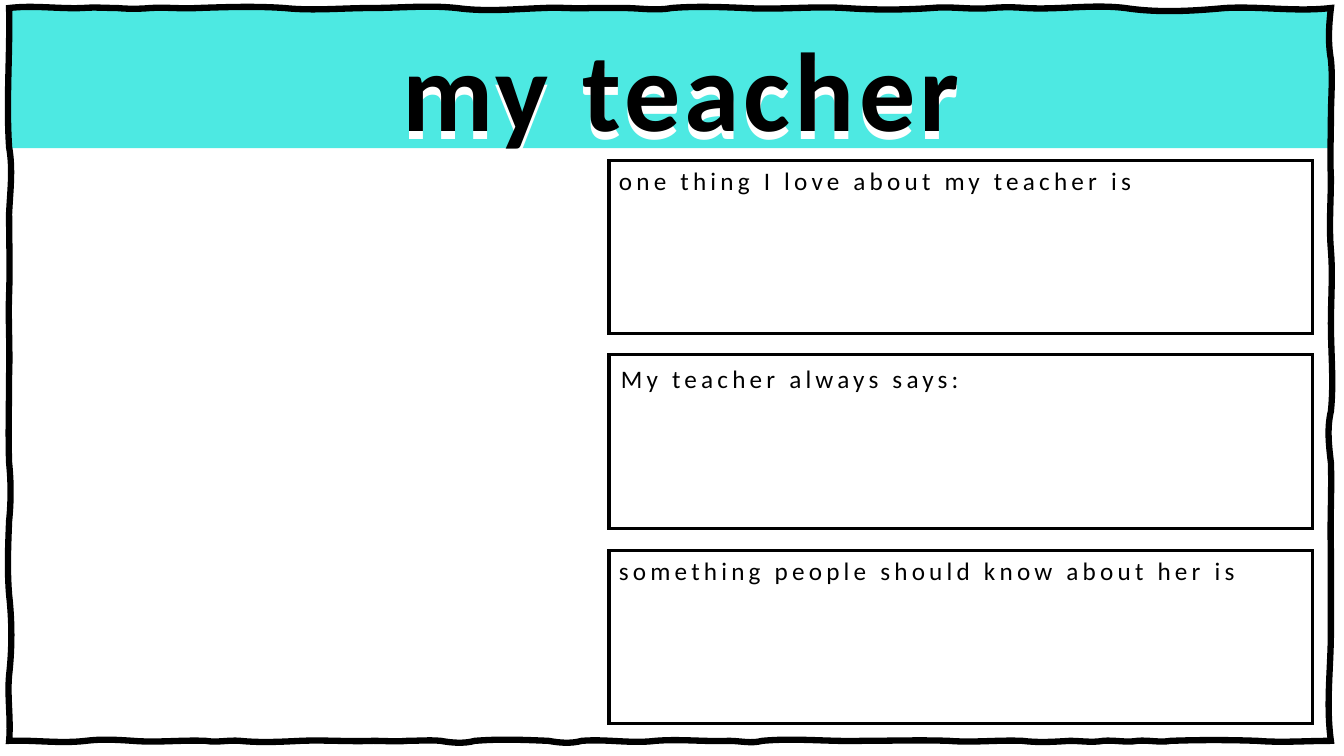
from lxml import etree
from pptx import Presentation
from pptx.dml.color import RGBColor
from pptx.enum.shapes import MSO_SHAPE
from pptx.enum.text import MSO_ANCHOR, MSO_AUTO_SIZE, PP_ALIGN
from pptx.oxml import parse_xml
from pptx.oxml.ns import nsdecls, qn
from pptx.util import Inches, Pt

BLACK = RGBColor(0x00, 0x00, 0x00)
WHITE = RGBColor(0xFF, 0xFF, 0xFF)
TURQUOISE = RGBColor(0x4D, 0xE9, 0xE2)


def write(sp, text, size, color=BLACK, bold=False, align=PP_ALIGN.LEFT):
    tf = sp.text_frame
    tf.word_wrap = True
    tf.auto_size = MSO_AUTO_SIZE.SHAPE_TO_FIT_TEXT
    tf.vertical_anchor = MSO_ANCHOR.TOP
    p = tf.paragraphs[0]
    p.alignment = align
    r = p.add_run()
    r.text = text
    r.font.name = "Calibri"
    r.font.size = Pt(size)
    r.font.bold = bold
    r.font.color.rgb = color
    r.font._element.set("spc", "300")
    return r


def style(sp, fill=None, line=None):
    sp.shadow.inherit = False
    if fill is None:
        sp.fill.background()
    else:
        sp.fill.solid()
        sp.fill.fore_color.rgb = fill
    if line is None:
        sp.line.fill.background()
    else:
        sp.line.color.rgb = BLACK
        sp.line.width = Pt(line)
        ln = sp._element.spPr.find(qn("a:ln"))
        etree.SubElement(ln, qn("a:miter")).set("lim", "800000")


prs = Presentation()
prs.slide_width = Inches(13.33)
prs.slide_height = Inches(7.5)
slide = prs.slides.add_slide(prs.slide_layouts[5])
shapes = slide.shapes

# Title band
band = shapes.add_shape(MSO_SHAPE.RECTANGLE, Inches(0.09), Inches(0.08),
                        Inches(13.1), Inches(1.39))
style(band, fill=TURQUOISE)

# Hand-drawn frame: each stroke is (end, two bends in hundredths of an inch)
LEFT, TOP, RIGHT, BOTTOM = 0.09, 0.08, 13.2, 7.35
top = [(0.82, -3, 1), (1.16, -1, 0), (1.49, 1, 1), (1.96, -1, 1),
       (2.82, -1, -2), (3.68, 3, 0), (4.53, 0, -3), (5.39, 4, 1),
       (5.86, -1, 1), (6.19, 0, 0), (6.66, 0, 3), (7.39, -2, -1),
       (8.38, 2, -2), (9.24, 2, 2), (9.83, -2, 2), (10.17, -1, -1),
       (11.16, 2, -4), (12.15, 5, 3), (RIGHT, -2, 4)]
right = [(0.59, -2, -3), (1.17, 2, 0), (1.76, 0, -1), (2.48, 0, -2),
         (3.21, 2, 0), (4.08, 0, 3), (4.59, -4, -2), (5.46, 1, -1),
         (6.26, 0, 0), (BOTTOM, 0, -5)]
bottom = [(12.47, 0, 2), (11.61, -1, -1), (11.28, 2, -1), (10.94, 2, -1),
          (10.61, 2, 0), (10.14, 1, 2), (9.41, -1, 2), (8.55, -1, 0),
          (7.56, 1, -3), (7.23, 3, 0), (6.5, 1, -2), (5.77, 3, -2),
          (5.44, 3, 2), (4.71, -1, -2), (4.37, 3, 2), (4.04, -1, 0),
          (3.7, 1, 0), (2.98, 1, -1), (2.38, 1, 2), (2.04, -1, 2),
          (1.32, -1, 2), (0.85, -1, -2), (LEFT, 3, -1)]
left = [(6.7, 2, -2), (5.9, 3, 3), (5.17, -2, -1), (4.59, 2, 2),
        (3.72, -1, 0), (2.92, 1, -1), (2.12, 1, 0), (1.46, 1, 4),
        (TOP, -3, 1)]
builder = shapes.build_freeform(Inches(LEFT), Inches(TOP))
builder.add_line_segments([(Inches(x), Inches(y)) for x, y in
                           [(RIGHT, TOP), (RIGHT, BOTTOM), (LEFT, BOTTOM)]])
frame = builder.convert_to_shape()
style(frame, line=4.5)

# Turn the straight sides of the frame into wavy curves
outline = next(frame._element.iter(qn("a:path")))
for side in outline.findall(qn("a:lnTo")):
    outline.remove(side)
close = outline.find(qn("a:close"))
for strokes, start, base, horizontal in [(top, LEFT, TOP, True),
                                         (right, TOP, RIGHT, False),
                                         (bottom, RIGHT, BOTTOM, True),
                                         (left, BOTTOM, LEFT, False)]:
    for end, bend1, bend2 in strokes:
        curve = etree.Element(qn("a:cubicBezTo"))
        for share, bend in [(1 / 3, bend1), (2 / 3, bend2), (1, 0)]:
            along = start + (end - start) * share
            across = base + bend / 100
            x, y = (along, across) if horizontal else (across, along)
            etree.SubElement(curve, qn("a:pt"), x=str(int(Inches(x - LEFT))),
                             y=str(int(Inches(y - TOP))))
        close.addprevious(curve)
        start = end

# Title with a white shade behind it
shade = shapes.add_textbox(Inches(0.94), Inches(0.22),
                           Inches(11.64), Inches(1.45))
write(shade, "my teacher", 80, WHITE, True, PP_ALIGN.CENTER)

title = shapes.title
title.left, title.top = Inches(0.94), Inches(0.14)
title.width, title.height = Inches(11.64), Inches(1.45)
r = write(title, "my teacher", 80, BLACK, True, PP_ALIGN.CENTER)
r.font._element.insert(0, parse_xml(
    f'<a:ln {nsdecls("a")} w="9525"><a:solidFill>'
    f'<a:srgbClr val="{BLACK}"/></a:solidFill></a:ln>'))
shade._element.addnext(title._element)

# Answer boxes, then their prompts
box_tops = [1.59, 3.52, 5.46]
for y in box_tops:
    box = shapes.add_shape(MSO_SHAPE.RECTANGLE, Inches(6.04), Inches(y),
                           Inches(6.98), Inches(1.72))
    style(box, line=2.25)

for text, x, y in [
        ("one thing I love about my teacher is", 6.04, box_tops[0]),
        ("My teacher always says:", 6.06, box_tops[1] + 0.04),
        ("something people should know about her is", 6.04, box_tops[2])]:
    prompt = shapes.add_textbox(Inches(x), Inches(y), Inches(6.98), Inches(0.4))
    write(prompt, text, 18)

prs.save("out.pptx")
